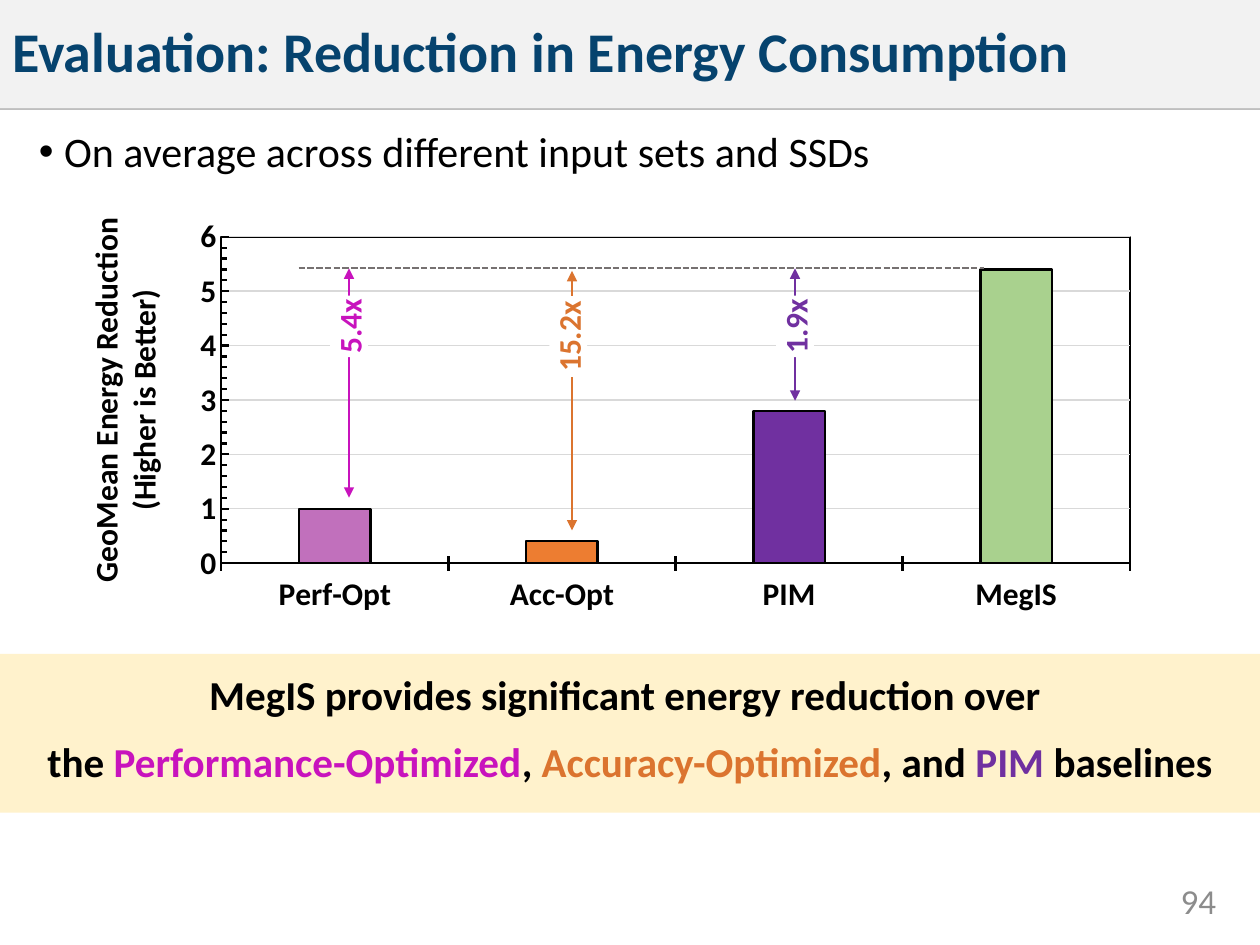
from lxml import etree
from pptx import Presentation
from pptx.chart.data import CategoryChartData
from pptx.dml.color import RGBColor
from pptx.enum.chart import XL_CHART_TYPE, XL_TICK_MARK
from pptx.enum.dml import MSO_LINE
from pptx.enum.shapes import MSO_CONNECTOR, MSO_SHAPE
from pptx.enum.text import MSO_ANCHOR, PP_ALIGN
from pptx.oxml import parse_xml
from pptx.oxml.ns import nsdecls, qn
from pptx.util import Inches, Pt

LEFT, CENTER, RIGHT = PP_ALIGN.LEFT, PP_ALIGN.CENTER, PP_ALIGN.RIGHT
TOP, MIDDLE = MSO_ANCHOR.TOP, MSO_ANCHOR.MIDDLE
FONT = "Calibri"
BLACK, WHITE = "000000", "FFFFFF"
MAGENTA, ORANGE, PURPLE = "C813BD", "DB742F", "7030A0"
MEGIS_LEVEL = 2.13


def color(value):
    return RGBColor.from_string(value)


def set_font(font, size, value, bold=False):
    font.name = FONT
    font.size = Pt(size)
    font.bold = bold
    font.color.rgb = color(value)


def set_line(line, value, width):
    line.color.rgb = color(value)
    line.width = Pt(width)


def add_bullet(paragraph, indent):
    properties = paragraph._p.get_or_add_pPr()
    properties.set("marL", str(Inches(indent)))
    properties.set("indent", str(-Inches(indent)))
    etree.SubElement(properties, qn("a:buFont")).set("typeface", "Arial")
    etree.SubElement(properties, qn("a:buChar")).set("char", "•")


def add_text(slide, position, lines, size, value=BLACK, bold=False, fill=None,
             align=LEFT, anchor=TOP, insets=(0.1, 0.05, 0.1, 0.05), rotation=0,
             space_after=0, line_spacing=1, bullet_indent=0):
    box = [Inches(length) for length in position]
    if fill:
        shape = slide.shapes.add_shape(MSO_SHAPE.RECTANGLE, *box)
        shape.shadow.inherit = False
        shape.fill.solid()
        shape.fill.fore_color.rgb = color(fill)
        shape.line.fill.background()
    else:
        shape = slide.shapes.add_textbox(*box)
    shape.rotation = rotation
    frame = shape.text_frame
    frame.word_wrap = True
    frame.vertical_anchor = anchor
    (frame.margin_left, frame.margin_top,
     frame.margin_right, frame.margin_bottom) = [Inches(inset) for inset in insets]
    for index, runs in enumerate(lines):
        paragraph = frame.add_paragraph() if index else frame.paragraphs[0]
        paragraph.alignment = align
        paragraph.line_spacing = line_spacing
        paragraph.space_after = Pt(space_after)
        if bullet_indent:
            add_bullet(paragraph, bullet_indent)
        for text, run_color in [(runs, value)] if isinstance(runs, str) else runs:
            run = paragraph.add_run()
            run.text = text
            set_font(run.font, size, run_color, bold)
    return shape


def add_line(slide, start, end, value, width=1.25, dash=None, arrows=False):
    connector = slide.shapes.add_connector(
        MSO_CONNECTOR.STRAIGHT, *[Inches(length) for length in start + end])
    set_line(connector.line, value, width)
    if dash:
        connector.line.dash_style = dash
    if arrows:
        for tag in ("a:headEnd", "a:tailEnd"):
            etree.SubElement(connector.line._ln, qn(tag)).set("type", "triangle")
    etree.SubElement(connector._element.spPr, qn("a:effectLst"))


def add_gain(slide, x, top, bottom, label, label_center, label_width, value):
    add_line(slide, (x, bottom), (x, top), value, arrows=True)
    center_x, center_y = label_center
    height = 0.3
    position = (center_x - label_width / 2, center_y - height / 2, label_width, height)
    add_text(slide, position, [label], 18, value, bold=True, fill=WHITE,
             align=CENTER, insets=(0, 0, 0, 0), rotation=270)


def format_plot_area(chart, x, y, width, height):
    plot_area = chart.element.find(".//" + qn("c:plotArea"))
    for layout in plot_area.findall(qn("c:layout")):
        plot_area.remove(layout)
    plot_area.insert(0, parse_xml(
        f'<c:layout {nsdecls("c")}><c:manualLayout><c:layoutTarget val="inner"/>'
        f'<c:xMode val="edge"/><c:yMode val="edge"/><c:x val="{x}"/><c:y val="{y}"/>'
        f'<c:w val="{width}"/><c:h val="{height}"/></c:manualLayout></c:layout>'))
    plot_area.append(parse_xml(
        f'<c:spPr {nsdecls("c", "a")}><a:noFill/><a:ln w="{Pt(1.25)}"><a:solidFill>'
        f'<a:srgbClr val="{BLACK}"/></a:solidFill></a:ln></c:spPr>'))


def add_energy_chart(slide):
    data = CategoryChartData()
    data.categories = ["Perf-Opt", "Acc-Opt", "PIM", "MegIS"]
    data.add_series("Series 1", (1, 0.4, 2.8, 5.4))
    chart = slide.shapes.add_chart(
        XL_CHART_TYPE.COLUMN_CLUSTERED, Inches(1.45), Inches(1.65),
        Inches(7.67), Inches(3.28), data).chart
    chart.has_legend = False
    chart.has_title = False
    set_font(chart.font, 18, BLACK, bold=True)
    plot = chart.plots[0]
    plot.gap_width, plot.overlap = 219, -27
    plot.vary_by_categories = False
    series = plot.series[0]
    series.format.fill.solid()
    series.format.fill.fore_color.rgb = color("5B9BD5")
    set_line(series.format.line, BLACK, 1.25)
    for index, value in enumerate(("C170BC", "ED7D31", PURPLE, "A9D18E")):
        point = series.points[index].format
        point.fill.solid()
        point.fill.fore_color.rgb = color(value)
        set_line(point.line, BLACK, 1.25)
    for axis in (chart.category_axis, chart.value_axis):
        set_line(axis.format.line, BLACK, 1.25)
        set_font(axis.tick_labels.font, 18, BLACK, bold=True)
    chart.category_axis.major_tick_mark = XL_TICK_MARK.CROSS
    value_axis = chart.value_axis
    value_axis.minimum_scale, value_axis.maximum_scale = 0, 6
    value_axis.major_unit, value_axis.minor_unit = 1, 0.2
    value_axis.major_tick_mark = XL_TICK_MARK.INSIDE
    value_axis.minor_tick_mark = XL_TICK_MARK.INSIDE
    value_axis.has_major_gridlines = True
    set_line(value_axis.major_gridlines.format.line, "D9D9D9", 0.75)
    value_axis.tick_labels.number_format = "General"
    value_axis.tick_labels.number_format_is_linked = False
    format_plot_area(chart, 0.04, 0.07, 0.94, 0.79)


def add_conclusion(slide):
    lines = [
        "MegIS provides significant energy reduction over ",
        [("the ", BLACK), ("Performance-Optimized", MAGENTA), (", ", BLACK),
         ("Accuracy-Optimized", ORANGE), (", and ", BLACK),
         ("PIM ", PURPLE), ("baselines", BLACK)],
    ]
    add_text(slide, (0, 5.19, 10, 1.26), lines, 23.5, bold=True, fill="FFF2CC",
             align=CENTER, anchor=MIDDLE, insets=(0.06, 0, 0.06, 0.09), space_after=10)


def main():
    presentation = Presentation()
    presentation.slide_width, presentation.slide_height = Inches(10), Inches(7.5)
    slide = presentation.slides.add_slide(presentation.slide_layouts[6])
    add_text(slide, (8.67, 6.95, 1.08, 0.4), ["94"], 20, "8C8C8C",
             align=RIGHT, anchor=MIDDLE)
    add_line(slide, (0, 0.86), (10, 0.86), "BFBFBF", width=2)
    add_text(slide, (0.21, 0.99, 9.62, 0.66),
             ["On average across different input sets and SSDs"], 24,
             line_spacing=0.9, bullet_indent=0.2)
    add_energy_chart(slide)
    add_text(slide, (-0.53, 2.82, 3.04, 0.71),
             ["GeoMean Energy Reduction", "(Higher is Better)"], 18, bold=True,
             align=CENTER, insets=(0, 0.05, 0, 0.05), rotation=270)
    add_conclusion(slide)
    add_gain(slide, 2.77, MEGIS_LEVEL, 3.95, "5.4x", (2.77, 2.59), 0.49, MAGENTA)
    add_line(slide, (2.37, MEGIS_LEVEL), (7.81, MEGIS_LEVEL), "767171",
             dash=MSO_LINE.SQUARE_DOT)
    add_gain(slide, 4.54, 2.15, 4.21, "15.2x", (4.51, 2.67), 0.64, ORANGE)
    add_gain(slide, 6.31, MEGIS_LEVEL, 3.18, "1.9x", (6.31, 2.59), 0.49, PURPLE)
    add_text(slide, (0, 0, 10, 0.86), ["Evaluation: Reduction in Energy Consumption"],
             32, "06436E", bold=True, fill="F2F2F2", anchor=MIDDLE,
             line_spacing=0.9, space_after=6)
    presentation.save("out.pptx")


if __name__ == "__main__":
    main()
